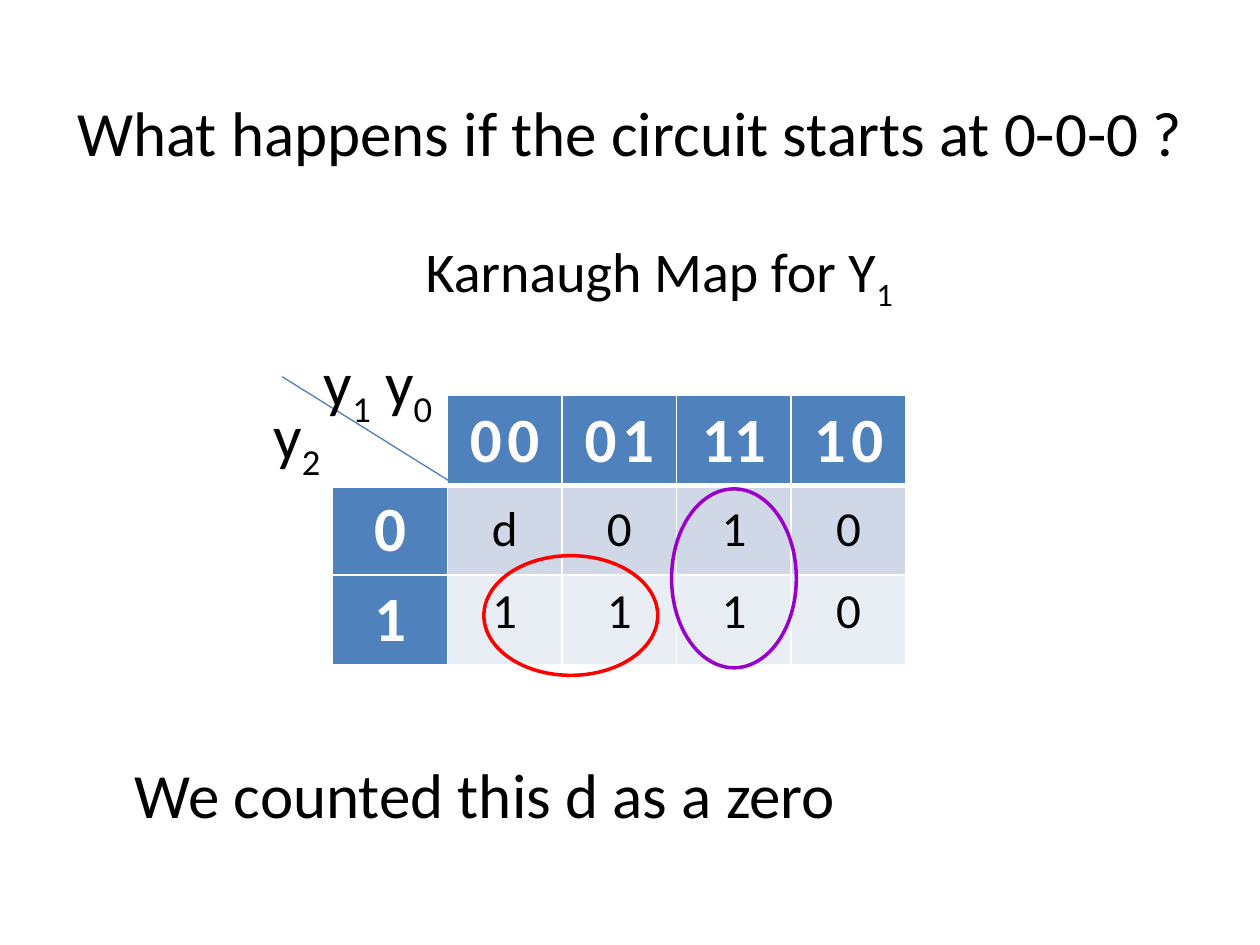
import pptx
import pptx.util
import pptx.dml.color
import pptx.enum.shapes
import pptx.enum.text
import pptx.oxml
import pptx.oxml.ns
from pptx.util import Inches

ALIGN = pptx.enum.text.PP_ALIGN
ANCHOR = pptx.enum.text.MSO_ANCHOR
SHAPE = pptx.enum.shapes.MSO_SHAPE


def rgb(value):
    return pptx.dml.color.RGBColor.from_string(value)


class Deck:
    font = "Calibri"
    ink = "000000"
    white = "FFFFFF"
    header = "4F81BD"
    bands = ("D0D8E8", "E9EDF4")

    def __init__(self):
        self.prs = pptx.Presentation()
        self.prs.slide_width = Inches(10)
        self.prs.slide_height = Inches(7.5)
        self.s = self.prs.slides.add_slide(self.prs.slide_layouts[5])

    def style(self, r, size, color, bold=False):
        r.font.name = self.font
        r.font.size = pptx.util.Pt(size)
        r.font.bold = bold
        r.font.color.rgb = rgb(color)

    def title(self, text, x, y, w, h):
        sp = self.s.shapes.title
        sp.left, sp.top, sp.width, sp.height = map(Inches, (x, y, w, h))
        tf = sp.text_frame
        tf.text = text
        tf.vertical_anchor = ANCHOR.MIDDLE
        p = tf.paragraphs[0]
        p.alignment = ALIGN.CENTER
        self.style(p.runs[0], 36, self.ink)

    def text(self, pieces, x, y, w, h, size=36, left=0.1):
        sp = self.s.shapes.add_textbox(*map(Inches, (x, y, w, h)))
        tf = sp.text_frame
        tf.word_wrap = True
        tf.margin_left = Inches(left)
        p = tf.paragraphs[0]
        for i, piece in enumerate(pieces):
            r = p.add_run()
            r.text = piece
            self.style(r, size, self.ink)
            if i % 2:
                r.font._element.set("baseline", "-25000")

    def borders(self, cell, bottom):
        tc_pr = cell._tc.get_or_add_tcPr()
        widths = {"lnL": 1, "lnR": 1, "lnT": 1, "lnB": bottom}
        for i, (side, width) in enumerate(widths.items()):
            tc_pr.insert(i, pptx.oxml.parse_xml(
                f'<a:{side} {pptx.oxml.ns.nsdecls("a")} w="{pptx.util.Pt(width)}">'
                f'<a:solidFill><a:srgbClr val="{self.white}"/></a:solidFill></a:{side}>'))

    def cell(self, cell, text, row, col):
        is_header = row == 0 or col == 0
        fill = self.header if is_header else self.bands[row - 1]
        if row == col == 0:
            fill = self.white
        cell.fill.solid()
        cell.fill.fore_color.rgb = rgb(fill)
        self.borders(cell, 3 if row == 0 else 1)
        cell.vertical_anchor = ANCHOR.MIDDLE if row < 2 or is_header else ANCHOR.TOP
        p = cell.text_frame.paragraphs[0]
        p.alignment = ALIGN.CENTER
        for piece in text.partition(" "):
            if piece:
                r = p.add_run()
                r.text = piece
                size = 14 if piece == " " else 36 if is_header else 28
                self.style(r, size, self.white if is_header else self.ink, is_header)

    def table(self, rows, x, y, col_w, row_h):
        n_rows, n_cols = len(rows), len(rows[0])
        size = (x, y, col_w * n_cols, row_h * n_rows)
        tbl = self.s.shapes.add_table(n_rows, n_cols, *map(Inches, size)).table
        for column in tbl.columns:
            column.width = Inches(col_w)
        for i, values in enumerate(rows):
            tbl.rows[i].height = Inches(row_h)
            for j, value in enumerate(values):
                self.cell(tbl.cell(i, j), value, i, j)

    def line(self, x1, y1, x2, y2, color):
        sp = self.s.shapes.add_connector(
            pptx.enum.shapes.MSO_CONNECTOR.STRAIGHT, *map(Inches, (x1, y1, x2, y2)))
        sp.line.color.rgb = rgb(color)
        sp.line.width = pptx.util.Pt(0.75)
        sp._element.spPr.append(
            pptx.oxml.parse_xml(f'<a:effectLst {pptx.oxml.ns.nsdecls("a")}/>'))

    def loop(self, x, y, w, h, color):
        sp = self.s.shapes.add_shape(SHAPE.OVAL, *map(Inches, (x, y, w, h)))
        sp.shadow.inherit = False
        sp.fill.background()
        sp.line.color.rgb = rgb(color)
        sp.line.width = pptx.util.Pt(2)


def main():
    d = Deck()
    d.title("What happens if the circuit starts at 0-0-0 ?", 0.5, 0.53, 9, 1.02)
    d.table([
        ["", "0 0", "0 1", "11", "1 0"],
        ["0", "d", "0", "1", "0"],
        ["1", "1", "1", "1", "0"],
    ], 2.64, 3.14, 0.91, 0.7)
    d.line(3.57, 3.82, 2.24, 2.99, "4B7EBC")
    d.text(["y", "1", " y", "0"], 2.24, 2.68, 1.38, 0.71, left=0.33)
    d.text(["y", "2"], 2.07, 3.1, 1.19, 0.71)
    d.text(["Karnaugh Map for Y", "1"], 3.28, 1.83, 4.47, 0.64, size=32)
    d.text(["We counted this d as a zero"], 0.97, 5.95, 6.21, 0.71)
    d.loop(5.33, 3.88, 0.99, 1.42, "9900CC")
    d.loop(3.84, 4.41, 1.38, 0.95, "FF0000")
    d.prs.save("out.pptx")


if __name__ == "__main__":
    main()
